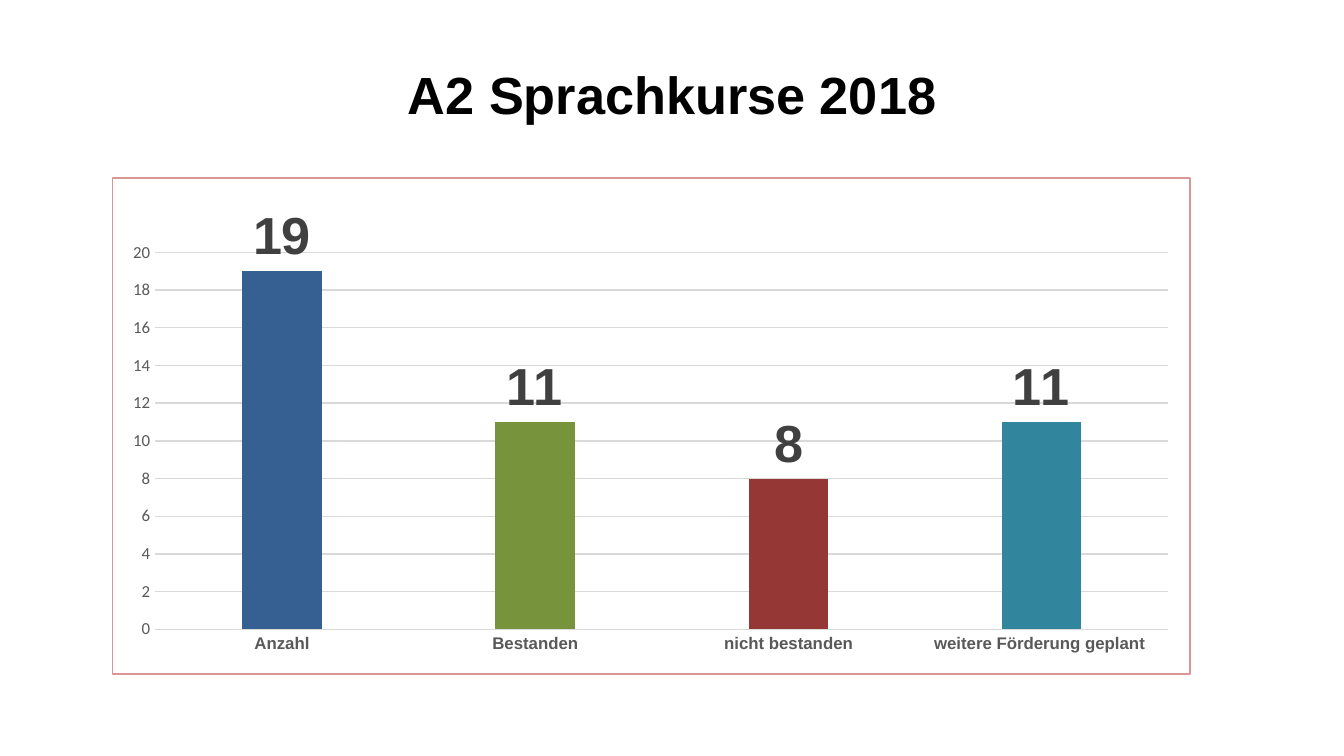
from lxml import etree
from pptx import Presentation
from pptx.chart.data import CategoryChartData
from pptx.dml.color import RGBColor
from pptx.enum.chart import XL_CHART_TYPE, XL_LABEL_POSITION, XL_TICK_MARK
from pptx.enum.text import MSO_ANCHOR, PP_ALIGN
from pptx.oxml import parse_xml
from pptx.oxml.ns import nsdecls, qn
from pptx.util import Inches, Pt

COLUMNS = XL_CHART_TYPE.COLUMN_CLUSTERED
OUTSIDE_END = XL_LABEL_POSITION.OUTSIDE_END
NO_TICK = XL_TICK_MARK.NONE
MIDDLE = MSO_ANCHOR.MIDDLE
CENTER = PP_ALIGN.CENTER

TITLE = "A2 Sprachkurse 2018"
RESULTS = [
    ("Anzahl", 19, "376092"),
    ("Bestanden", 11, "77933C"),
    ("nicht bestanden", 8, "953735"),
    ("weitere Förderung geplant ", 11, "31859C"),
]
SLIDE_WIDTH = 10
SLIDE_SIZE = (SLIDE_WIDTH, SLIDE_WIDTH * 9 / 16)
TITLE_AREA = (0.5, 0.23, 9, 0.94)
CHART_AREA = (0.83, 1.32, 8.03, 3.7)
PLOT_SHARES = {"x": 0.04, "y": 0.15, "w": 0.94, "h": 0.76}
GRID_COLOR = "D9D9D9"
BORDER_COLOR = "D99694"
AXIS_COLOR = "595959"


def color(value):
    return RGBColor.from_string(value)


def inches(values):
    return [Inches(value) for value in values]


def style_font(font, name, size, value, bold=False):
    font.name = name
    font.size = Pt(size)
    font.bold = bold
    font.color.rgb = color(value)


def style_line(line, value):
    line.color.rgb = color(value)
    line.width = Pt(0.75)


def add_title(slide):
    title = slide.shapes.title
    title.left, title.top, title.width, title.height = inches(TITLE_AREA)
    frame = title.text_frame
    frame.text = TITLE
    frame.vertical_anchor = MIDDLE
    para = frame.paragraphs[0]
    para.alignment = CENTER
    style_font(para.runs[0].font, "Arial", 28, "000000", True)


def place_plot(chart):
    plot_area = chart._chartSpace.chart.plotArea
    for layout in plot_area.findall(qn("c:layout")):
        plot_area.remove(layout)
    layout = etree.Element(qn("c:layout"))
    manual = etree.SubElement(layout, qn("c:manualLayout"))
    settings = {"layoutTarget": "inner", "xMode": "edge", "yMode": "edge", **PLOT_SHARES}
    for tag, value in settings.items():
        etree.SubElement(manual, qn(f"c:{tag}")).set("val", str(value))
    plot_area.insert(0, layout)


def add_border(chart):
    border = parse_xml(
        f'<c:spPr {nsdecls("c", "a")}><a:noFill/><a:ln w="{Pt(0.75)}"><a:solidFill>'
        f'<a:srgbClr val="{BORDER_COLOR}"/></a:solidFill></a:ln></c:spPr>'
    )
    chart._chartSpace.chart.addnext(border)


def style_axes(chart):
    categories, values = chart.category_axis, chart.value_axis
    for axis in (categories, values):
        axis.major_tick_mark = axis.minor_tick_mark = NO_TICK
    style_font(categories.tick_labels.font, "Arial", 9, AXIS_COLOR, True)
    style_font(values.tick_labels.font, "Calibri", 9, AXIS_COLOR)
    style_line(categories.format.line, GRID_COLOR)
    style_line(values.major_gridlines.format.line, GRID_COLOR)
    values.format.line.fill.background()
    values.minimum_scale, values.maximum_scale, values.major_unit = 0, 20, 2


def style_columns(chart):
    plot = chart.plots[0]
    plot.gap_width, plot.overlap = 219, -27
    plot.vary_by_categories = False
    series = plot.series[0]
    for index, (_, _, fill) in enumerate(RESULTS):
        column = series if index == 0 else series.points[index]
        column.format.fill.solid()
        column.format.fill.fore_color.rgb = color(fill)
    labels = series.data_labels
    labels.show_value = True
    labels.position = OUTSIDE_END
    style_font(labels.font, "Arial", 28, "404040", True)


def add_results_chart(slide):
    data = CategoryChartData()
    data.categories = [name for name, _, _ in RESULTS]
    data.add_series("Series 1", [count for _, count, _ in RESULTS])
    chart = slide.shapes.add_chart(COLUMNS, *inches(CHART_AREA), data).chart
    chart.has_title = False
    chart.has_legend = False
    style_font(chart.font, "Calibri", 10, "000000")
    place_plot(chart)
    add_border(chart)
    style_axes(chart)
    style_columns(chart)


def main():
    deck = Presentation()
    deck.slide_width, deck.slide_height = inches(SLIDE_SIZE)
    slide = deck.slides.add_slide(deck.slide_layouts[5])
    add_title(slide)
    add_results_chart(slide)
    deck.save("out.pptx")


if __name__ == "__main__":
    main()
